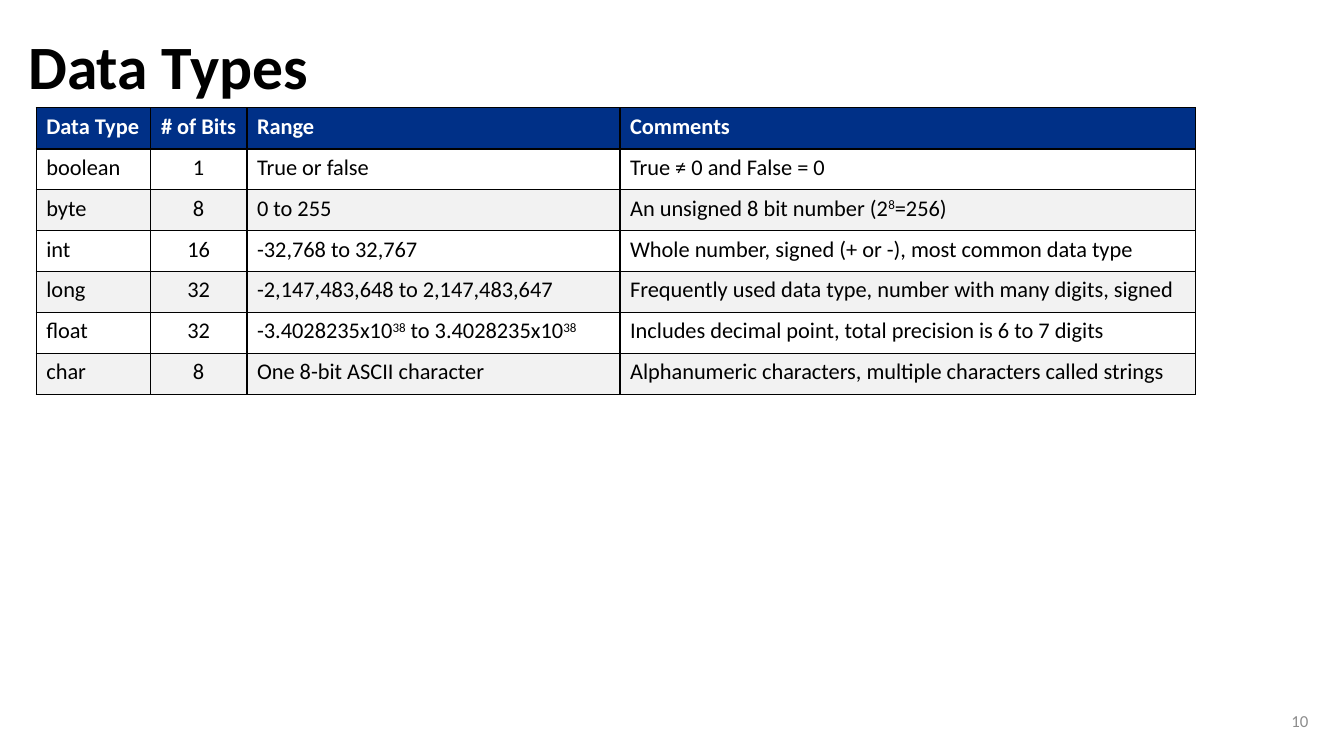
from dataclasses import dataclass

from lxml import etree
from pptx import Presentation
from pptx import util as u
from pptx.dml.color import RGBColor
from pptx.enum import text
from pptx.oxml.ns import qn


@dataclass(frozen=True)
class Theme:
    font: str = "Calibri"
    ink: str = "000000"
    header: str = "003087"
    light: str = "FFFFFF"
    band: str = "F2F2F2"
    muted: str = "8C8C8C"
    title_size: int = 44
    table_size: int = 16
    number_size: int = 12
    rule: float = 1
    header_rule: float = 1.5


THEME = Theme()
WIDTH, HEIGHT = 13.33, 7.5
COLUMNS = [1.13, 0.96, 3.7, 5.71]
ROW = 0.406
LEFT, CENTER, RIGHT = text.PP_ALIGN.LEFT, text.PP_ALIGN.CENTER, text.PP_ALIGN.RIGHT

# Text between two ^ marks is raised
DATA_TYPES = [
    ["Data Type", "# of Bits", "Range", "Comments"],
    ["boolean", "1", "True or false", "True ≠ 0 and False = 0"],
    ["byte", "8", "0 to 255", "An unsigned 8 bit number (2^8^=256)"],
    ["int", "16", "-32,768 to 32,767",
     "Whole number, signed (+ or -), most common data type"],
    ["long", "32", "-2,147,483,648 to 2,147,483,647",
     "Frequently used data type, number with many digits, signed"],
    ["float", "32", "-3.4028235x10^38^ to 3.4028235x10^38^",
     "Includes decimal point, total precision is 6 to 7 digits"],
    ["char", "8", "One 8-bit ASCII character",
     "Alphanumeric characters, multiple characters called strings"],
]


def write(frame, words, size, color=THEME.ink, bold=False, align=LEFT, spacing=1.0):
    line = frame.paragraphs[0]
    line.alignment = align
    line.line_spacing = spacing
    for i, part in enumerate(words.split("^")):
        if not part:
            continue
        run = line.add_run()
        run.text = part
        run.font.name = THEME.font
        run.font.size = u.Pt(size)
        run.font.bold = bold
        run.font.color.rgb = RGBColor.from_string(color)
        if i % 2:
            run._r.get_or_add_rPr().set("baseline", "30000")


def place(shape, left, top, width, height):
    """Position a shape by shares of the slide's size."""
    shape.left, shape.width = (u.Inches(WIDTH * x) for x in (left, width))
    shape.top, shape.height = (u.Inches(HEIGHT * y) for y in (top, height))


def settle(frame):
    frame.word_wrap = True
    frame.auto_size = text.MSO_AUTO_SIZE.NONE
    frame.vertical_anchor = text.MSO_ANCHOR.MIDDLE


def add_borders(cell, widths):
    """Draw left, right, top and bottom rules ahead of the cell's fill."""
    properties = cell._tc.get_or_add_tcPr()
    for i, (side, width) in enumerate(zip("LRTB", widths)):
        edge = etree.Element(qn(f"a:ln{side}"), w=str(int(u.Pt(width))))
        fill = etree.SubElement(edge, qn("a:solidFill"))
        etree.SubElement(fill, qn("a:srgbClr"), val=THEME.ink)
        properties.insert(i, edge)


def add_title(slide, words):
    title = slide.shapes.title
    place(title, 0.0135, 0.04, 0.968, 0.103)
    settle(title.text_frame)
    write(title.text_frame, words, THEME.title_size, bold=True, spacing=0.9)


def add_data_table(slide, rows):
    table = slide.shapes.add_table(
        len(rows), len(COLUMNS), u.Inches(0.36), u.Inches(1.07),
        u.Inches(sum(COLUMNS)), u.Inches(ROW * len(rows))).table
    for column, width in zip(table.columns, COLUMNS):
        column.width = u.Inches(width)
    for r, row in enumerate(rows):
        table.rows[r].height = u.Inches(ROW)
        head = r == 0
        shade = THEME.header if head else THEME.light if r % 2 else THEME.band
        top = THEME.header_rule if r == 1 else THEME.rule
        bottom = THEME.header_rule if head else THEME.rule
        for c, words in enumerate(row):
            cell = table.cell(r, c)
            cell.fill.solid()
            cell.fill.fore_color.rgb = RGBColor.from_string(shade)
            add_borders(cell, (THEME.rule, THEME.rule, top, bottom))
            write(cell.text_frame, words, THEME.table_size, bold=head,
                  color=THEME.light if head else THEME.ink,
                  align=CENTER if c == 1 else LEFT)


def add_page_number(slide, number):
    page = slide.shapes.add_textbox(0, 0, 0, 0)
    place(page, 0.756, 0.927, 0.225, 0.053)
    settle(page.text_frame)
    write(page.text_frame, number, THEME.number_size, color=THEME.muted, align=RIGHT)


def main():
    deck = Presentation()
    deck.slide_width, deck.slide_height = u.Inches(WIDTH), u.Inches(HEIGHT)
    slide = deck.slides.add_slide(deck.slide_layouts.get_by_name("Title Only"))
    add_title(slide, "Data Types")
    add_page_number(slide, "10")
    add_data_table(slide, DATA_TYPES)
    deck.save("out.pptx")


if __name__ == "__main__":
    main()
